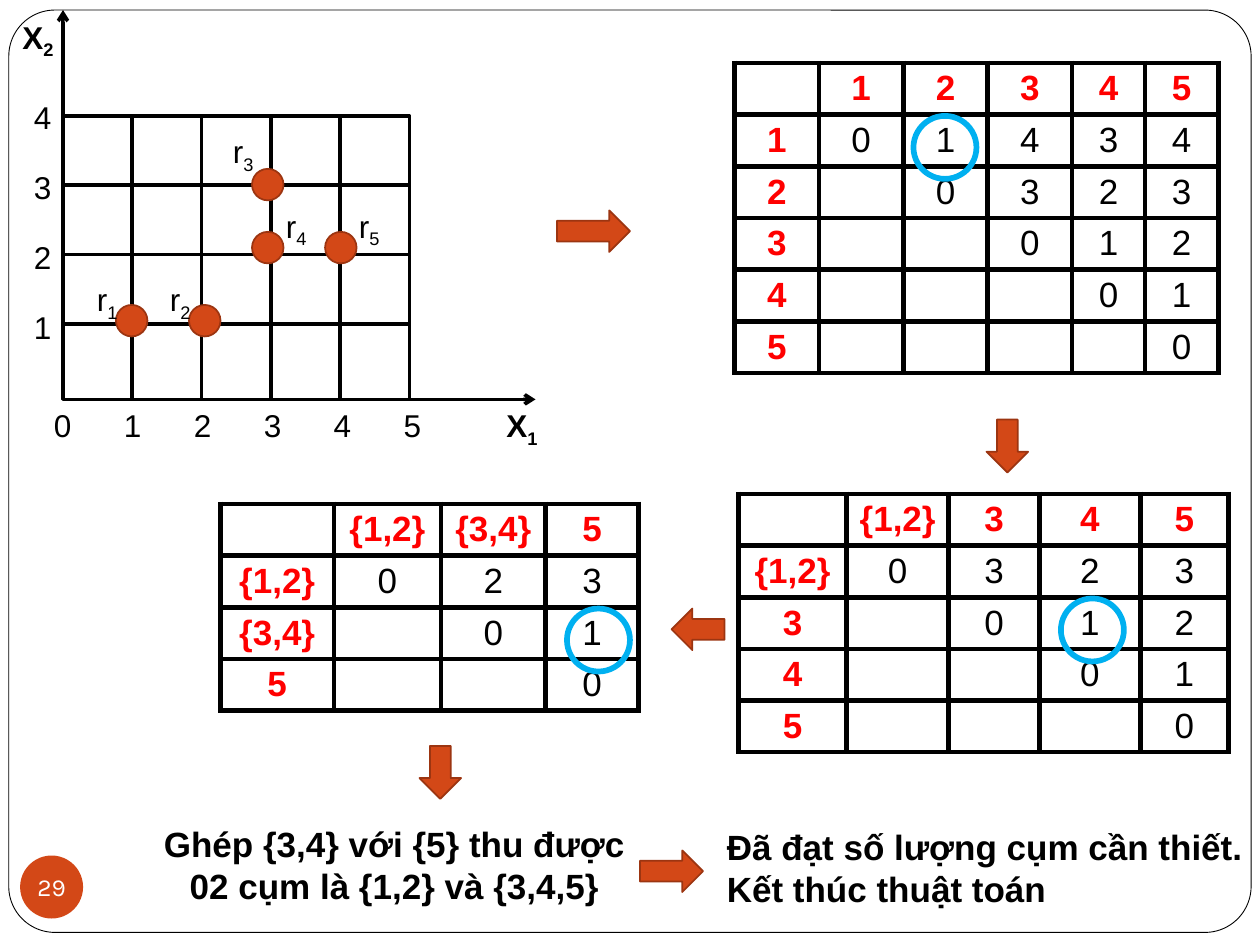
from lxml import etree
from pptx import Presentation
from pptx.dml.color import RGBColor
from pptx.enum.shapes import MSO_CONNECTOR, MSO_SHAPE
from pptx.enum.text import MSO_ANCHOR, PP_ALIGN
from pptx.oxml.ns import qn
from pptx.util import Inches, Pt

CENTER, LEFT = PP_ALIGN.CENTER, PP_ALIGN.LEFT
MIDDLE = MSO_ANCHOR.MIDDLE
OVAL, RECT, ROUNDED = MSO_SHAPE.OVAL, MSO_SHAPE.RECTANGLE, MSO_SHAPE.ROUNDED_RECTANGLE
RIGHT_ARROW, DOWN_ARROW, LEFT_ARROW = (
    MSO_SHAPE.RIGHT_ARROW, MSO_SHAPE.DOWN_ARROW, MSO_SHAPE.LEFT_ARROW)

BLACK, WHITE, RED = "000000", "FFFFFF", "FF0000"
ORANGE, RUST, BLUE = "D34817", "9C3511", "00B0F0"

# Upper triangular distance matrices: each row starts on the diagonal
ROW_HEIGHT = 0.41
MATRICES = [
    {"at": (5.83, 0.5), "widths": [0.67, 0.67, 0.67, 0.67, 0.58, 0.58],
     "clusters": ["1", "2", "3", "4", "5"],
     "distances": [[0, 1, 4, 3, 4], [0, 3, 2, 3], [0, 1, 2], [0, 1], [0]]},
    {"at": (5.86, 3.92), "widths": [0.86, 0.81, 0.72, 0.8, 0.7],
     "clusters": ["{1,2}", "3", "4", "5"],
     "distances": [[0, 3, 2, 3], [0, 1, 2], [0, 1], [0]]},
    {"at": (1.75, 4), "widths": [0.9, 0.85, 0.83, 0.74],
     "clusters": ["{1,2}", "{3,4}", "5"],
     "distances": [[0, 2, 3], [0, 1], [0]]},
]
MINIMUM_RINGS = [(4.5, 4.83), (8.42, 4.75), (7.25, 0.92)]
STEP_ARROWS = [
    (RIGHT_ARROW, (4.42, 1.67, 0.58, 0.33)),
    (DOWN_ARROW, (7.83, 3.33, 0.33, 0.42)),
    (LEFT_ARROW, (5.33, 4.83, 0.42, 0.33)),
    (DOWN_ARROW, (3.33, 5.92, 0.33, 0.42)),
    (RIGHT_ARROW, (5.08, 6.75, 0.5, 0.33)),
]
CONCLUSIONS = [
    ("Ghép {3,4} với {5} thu được 02 cụm là {1,2} và {3,4,5}",
     (1.17, 6.48, 3.92, 0.77), CENTER),
    ("Đã đạt số lượng cụm cần thiết. Kết thúc thuật toán",
     (5.67, 6.5, 4.33, 0.77), LEFT),
]

GRID_LEFT, GRID_TOP, GRID_STEP, GRID_COLUMNS = 0.5, 0.92, 0.55, 5
GRID_ROW_HEIGHTS = [0.55, 0.55, 0.55, 0.6]
AXES = [((0.5, 0.92), (0.5, 0.08)), ((0.5, 3.17), (4.25, 3.17))]
AXIS_NAMES = [("1", (3.92, 3.17)), ("2", (0.08, 0.09))]
AXIS_NAME_WIDTH, POINT_NAME_WIDTH = 0.5, 0.42
X_TICKS = ["0", "1", "2", "3", "4", "5"]
Y_TICKS = ["4", "3", "2", "1"]
TICK_PITCH = 0.555
# Number, position of the dot, offset of its label
POINTS = [
    ("1", (0.92, 2.42), (-0.25, -0.25)),
    ("2", (1.5, 2.42), (-0.25, -0.25)),
    ("3", (2, 1.34), (-0.25, -0.34)),
    ("4", (2, 1.84), (0.17, -0.25)),
    ("5", (2.58, 1.84), (0.17, -0.25)),
]


def rgb(color):
    return RGBColor.from_string(color)


def inches(values):
    return [Inches(value) for value in values]


def add_run(paragraph, text, size=18, color=BLACK, bold=False, font="Arial"):
    run = paragraph.add_run()
    run.text = text
    run.font.size, run.font.bold, run.font.name = Pt(size), bold, font
    run.font.color.rgb = rgb(color)
    return run


def add_shape(kind, box, fill=None, line=None, width=1):
    shape = slide.shapes.add_shape(kind, *inches(box))
    shape.shadow.inherit = False
    if fill:
        shape.fill.solid()
        shape.fill.fore_color.rgb = rgb(fill)
    else:
        shape.fill.background()
    if line:
        shape.line.color.rgb = rgb(line)
        shape.line.width = Pt(width)
    else:
        shape.line.fill.background()
    return shape


def add_text_frame(box):
    frame = slide.shapes.add_textbox(*inches(box)).text_frame
    frame.word_wrap = True
    return frame


def add_subscripted(letter, index, position, width, bold=False):
    frame = add_text_frame((*position, width, 0.42))
    frame.margin_right = 0
    paragraph = frame.paragraphs[0]
    add_run(paragraph, letter, bold=bold)
    subscript = add_run(paragraph, index, bold=bold)
    subscript.font._element.set("baseline", "-25000")


def add_axis(start, end):
    axis = slide.shapes.add_connector(MSO_CONNECTOR.STRAIGHT, *inches(start + end))
    axis.line.color.rgb = rgb(BLACK)
    axis.line.width = Pt(2)
    etree.SubElement(axis.line._get_or_add_ln(), qn("a:tailEnd"), type="arrow")
    etree.SubElement(axis._element.spPr, qn("a:effectLst"))


def set_borders(cell, color=BLACK, width=3):
    properties = cell._tc.get_or_add_tcPr()
    for position, side in enumerate(("a:lnL", "a:lnR", "a:lnT", "a:lnB")):
        border = etree.Element(qn(side), w=str(Pt(width)))
        fill = etree.SubElement(border, qn("a:solidFill"))
        etree.SubElement(fill, qn("a:srgbClr"), val=color)
        properties.insert(position, border)


def add_matrix(at, widths, clusters, distances):
    rows = [["", *clusters]]
    for i, (cluster, values) in enumerate(zip(clusters, distances)):
        rows.append([cluster] + [""] * i + [str(value) for value in values])
    size = len(rows)
    table = slide.shapes.add_table(
        size, size, *inches((*at, sum(widths), ROW_HEIGHT * size))).table
    table.first_row = table.horz_banding = False
    for column, width in zip(table.columns, widths):
        column.width = Inches(width)
    for r, row in enumerate(rows):
        table.rows[r].height = Inches(ROW_HEIGHT)
        for c, text in enumerate(row):
            cell = table.cell(r, c)
            cell.fill.background()
            cell.vertical_anchor = MIDDLE
            cell.margin_top = cell.margin_bottom = Inches(0.04)
            cell.margin_left = cell.margin_right = Inches(0.05)
            set_borders(cell)
            if text:
                is_header = r == 0 or c == 0
                paragraph = cell.text_frame.paragraphs[0]
                paragraph.alignment = CENTER
                add_run(paragraph, text, 20, RED if is_header else BLACK, is_header)


def add_x_ticks():
    paragraph = add_text_frame((0.33, 3.17, 3.42, 0.4)).paragraphs[0]
    stops = etree.SubElement(paragraph._p.get_or_add_pPr(), qn("a:tabLst"))
    for i in range(1, len(X_TICKS)):
        etree.SubElement(stops, qn("a:tab"), pos=str(Inches(TICK_PITCH * i)), algn="l")
    add_run(paragraph, "\t".join(X_TICKS))


def add_y_ticks():
    frame = add_text_frame((0.17, 0.75, 0.33, 2.06))
    for i, tick in enumerate(Y_TICKS):
        paragraph = frame.add_paragraph() if i else frame.paragraphs[0]
        paragraph.line_spacing = paragraph.space_after = Pt(20)
        add_run(paragraph, tick)


prs = Presentation()
prs.slide_width, prs.slide_height = Inches(10), Inches(7.5)
slide = prs.slides.add_slide(prs.slide_layouts[6])

frame_border = add_shape(ROUNDED, (0.07, 0.08, 9.86, 7.32), WHITE, BLACK, 0.5)
frame_border.adjustments[0] = 0.05
page_badge = add_shape(OVAL, (0.16, 6.79, 0.5, 0.5), ORANGE).text_frame
page_badge.margin_left = page_badge.margin_right = 0
page_badge.margin_top = page_badge.margin_bottom = 0
page_badge.word_wrap = False
page_badge.vertical_anchor = MIDDLE
page_badge.paragraphs[0].alignment = CENTER
add_run(page_badge.paragraphs[0], "29", 14, WHITE, font="Karla")

for matrix in MATRICES:
    add_matrix(**matrix)
for ring in MINIMUM_RINGS:
    add_shape(OVAL, (*ring, 0.5, 0.5), line=BLUE, width=3.25)
for kind, box in STEP_ARROWS:
    add_shape(kind, box, ORANGE, RUST)
for text, box, alignment in CONCLUSIONS:
    conclusion = add_text_frame(box).paragraphs[0]
    conclusion.alignment = alignment
    add_run(conclusion, text, 20, bold=True)

for r, height in enumerate(GRID_ROW_HEIGHTS):
    for c in range(GRID_COLUMNS):
        add_shape(RECT, (GRID_LEFT + c * GRID_STEP, GRID_TOP + r * GRID_STEP,
                         GRID_STEP, height), line=BLACK, width=2)
for start, end in AXES:
    add_axis(start, end)
add_x_ticks()
add_y_ticks()
for index, position in AXIS_NAMES:
    add_subscripted("X", index, position, AXIS_NAME_WIDTH, bold=True)
for _, position, _ in POINTS:
    add_shape(OVAL, (*position, 0.25, 0.25), ORANGE, RUST)
for index, (x, y), (dx, dy) in POINTS:
    add_subscripted("r", index, (x + dx, y + dy), POINT_NAME_WIDTH)

prs.save("out.pptx")
